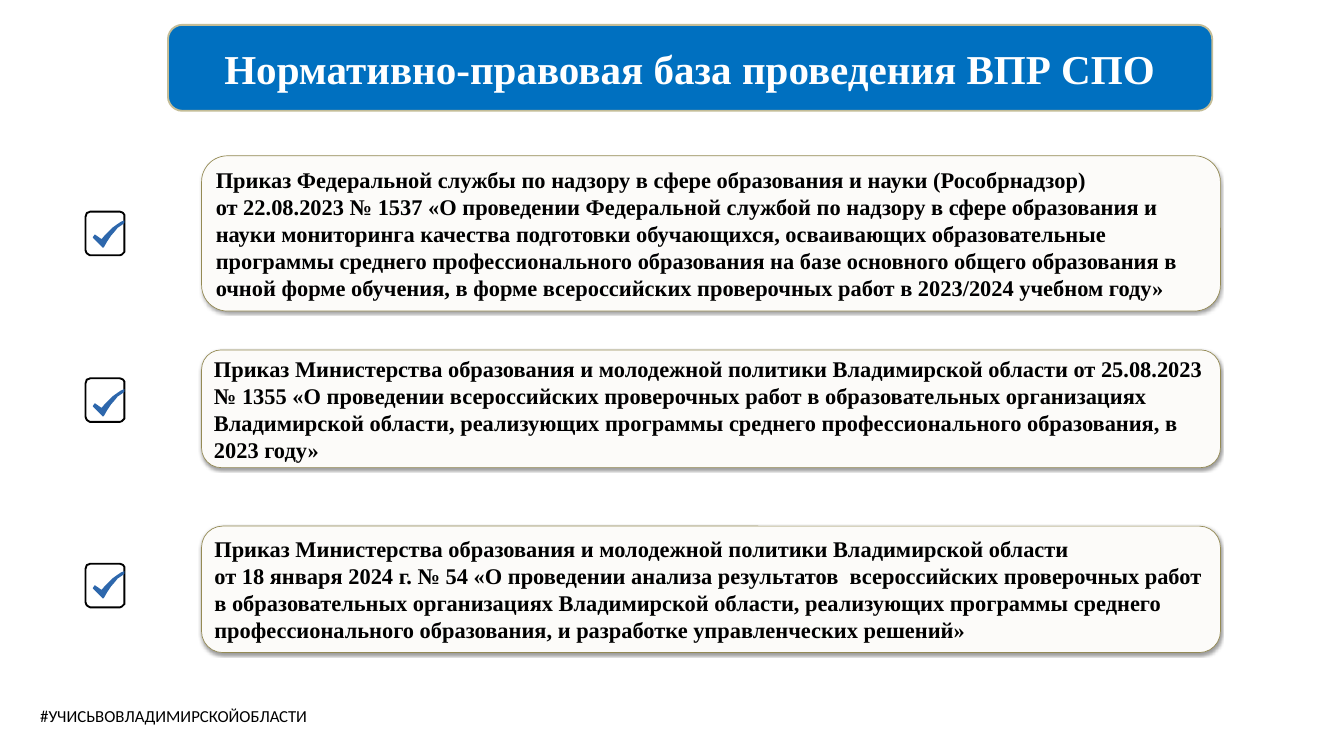
from pptx import Presentation
from pptx import util as u
from pptx.dml.color import RGBColor
from pptx.enum import shapes, text
from pptx.oxml import parse_xml
from pptx.oxml.ns import nsdecls

SERIF = "Times New Roman"
ORDER_LEFT, ORDER_WIDTH = 7.62, 38.51

# Text lines, top and height of each order; tops of its check box and tick
ORDERS = [
    (["Приказ Федеральной службы по надзору в сфере образования и науки (Рособрнадзор) ",
      "от 22.08.2023 № 1537 «О проведении Федеральной службой по надзору в сфере "
      "образования и науки мониторинга качества подготовки обучающихся, осваивающих "
      "образовательные программы среднего профессионального образования на базе "
      "основного общего образования в очной форме обучения, в форме всероссийских "
      "проверочных работ в 2023/2024 учебном году»"], 5.89, 5.87, 8.0, 8.33),
    (["Приказ Министерства образования и молодежной политики Владимирской области "
      "от 25.08.2023 № 1355 «О проведении всероссийских проверочных работ в "
      "образовательных организациях Владимирской области, реализующих программы "
      "среднего профессионального образования, в 2023 году»"], 13.23, 4.45, 14.3, 14.71),
    (["Приказ Министерства образования и молодежной политики Владимирской области ",
      "от 18 января 2024 г. № 54 «О проведении анализа результатов  всероссийских "
      "проверочных работ в образовательных организациях Владимирской области, "
      "реализующих программы среднего профессионального образования, и разработке "
      "управленческих решений»"], 19.89, 4.78, 21.31, 21.59),
]

# Outlines in hundredths of an inch from their own top left corner
CHECK_BOX = [(51, 65), (7, 65), (5, 64), (2, 62), (1, 60), (0, 57), (0, 8),
             (1, 5), (2, 2), (5, 1), (7, 0), (51, 0), (54, 1), (56, 2),
             (58, 5), (58, 8), (58, 57), (58, 60), (56, 62), (54, 64)]
TICK = [(47, 0), (42, 2), (36, 6), (29, 11), (24, 16), (21, 19), (18, 22),
        (13, 28), (3, 21), (0, 25), (0, 26), (15, 41), (17, 39), (21, 32),
        (27, 23), (33, 16), (37, 11), (43, 7), (47, 4)]


def colour(value):
    return RGBColor.from_string(value)


class Page:
    """Slide style and the slide being filled."""

    def __init__(self, deck):
        self.page = deck.slides.add_slide(deck.slide_layouts[6])

    def paint(self, shape, fill=None, line=None, weight=1):
        shape.shadow.inherit = False
        if fill:
            shape.fill.solid()
            shape.fill.fore_color.rgb = colour(fill)
        else:
            shape.fill.background()
        if line:
            shape.line.color.rgb = colour(line)
            shape.line.width = u.Pt(weight)
        else:
            shape.line.fill.background()

    def add_text(self, shape, lines, size, font, ink="000000", bold=False,
                 align=text.PP_ALIGN.LEFT):
        para = shape.text_frame.paragraphs[0]
        para.alignment = align
        for number, line in enumerate(lines):
            if number:
                para.add_line_break()
            span = para.add_run()
            span.text = line
            span.font.size = u.Pt(size)
            span.font.name = font
            span.font.bold = bold
            span.font.color.rgb = colour(ink)

    def panel(self, left, top, width, height, fill, line, weight):
        box = self.page.shapes.add_shape(
            shapes.MSO_SHAPE.ROUNDED_RECTANGLE,
            u.Cm(left), u.Cm(top), u.Cm(width), u.Cm(height))
        self.paint(box, fill, line, weight)
        box.text_frame.word_wrap = True
        box.text_frame.vertical_anchor = text.MSO_ANCHOR.MIDDLE
        return box

    def drop_shadow(self, shape):
        effects = shape._element.spPr.find(
            "{http://schemas.openxmlformats.org/drawingml/2006/main}effectLst")
        effects.append(parse_xml(
            f'<a:outerShdw {nsdecls("a")} blurRad="39370" dist="20320" '
            'dir="5400000" rotWithShape="0"><a:srgbClr val="000000">'
            '<a:alpha val="38000"/></a:srgbClr></a:outerShdw>'))

    def outline(self, points, left, top, **style):
        builder = self.page.shapes.build_freeform(*points[0], scale=u.Cm(2.54) / 100)
        builder.add_line_segments(points[1:], close=True)
        self.paint(builder.convert_to_shape(u.Cm(left), u.Cm(top)), **style)

    def label(self, left, top, width, height, line, size, font):
        box = self.page.shapes.add_textbox(
            u.Cm(left), u.Cm(top), u.Cm(width), u.Cm(height))
        box.text_frame.word_wrap = False
        box.text_frame.auto_size = text.MSO_AUTO_SIZE.SHAPE_TO_FIT_TEXT
        self.add_text(box, [line], size, font)


def main():
    deck = Presentation()
    deck.slide_width, deck.slide_height = u.Cm(50.8), u.Cm(28.58)
    page = Page(deck)

    # Title
    title = page.panel(6.35, 0.94, 39.47, 3.25, "0070C0", "C4BD97", 2)
    page.add_text(title, ["Нормативно-правовая база проведения ВПР СПО"], 44, SERIF,
                  ink="FFFFFF", bold=True, align=text.PP_ALIGN.CENTER)

    # Orders, each with a ticked check box
    for lines, top, height, check_top, tick_top in ORDERS:
        order = page.panel(ORDER_LEFT, top, ORDER_WIDTH, height, "FCFBF9", "948A54", 0.75)
        page.drop_shadow(order)
        page.add_text(order, lines, 24, SERIF, bold=True)
        page.outline(CHECK_BOX, 3.23, check_top, line="000000", weight=2)
        page.outline(TICK, 3.51, tick_top, fill="2D67AC")

    # Hashtag
    page.label(1.27, 26.57, 10.85, 1.02, "#УЧИСЬВОВЛАДИМИРСКОЙОБЛАСТИ", 18, "Calibri")

    deck.save("out.pptx")


if __name__ == "__main__":
    main()
